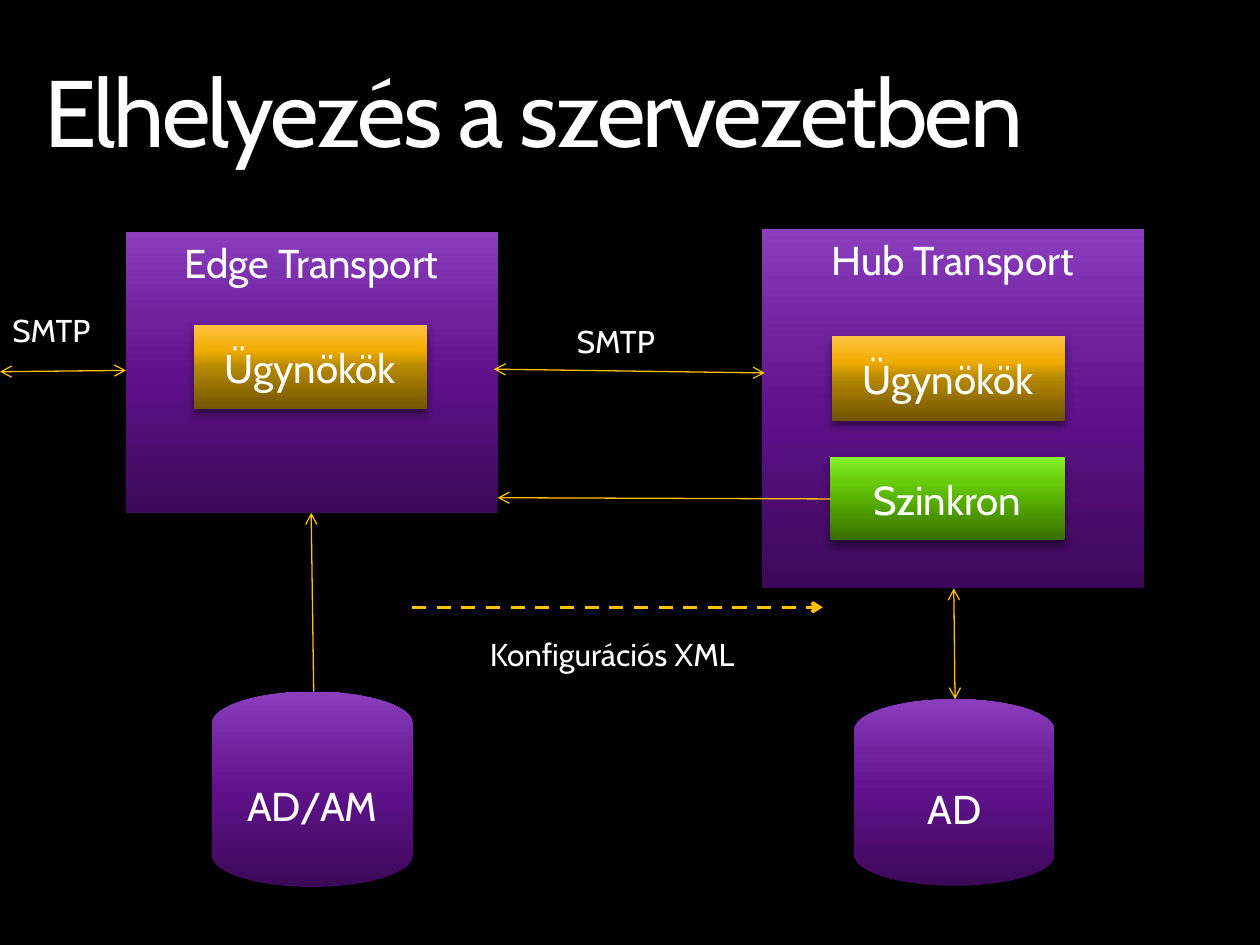
from lxml import etree
from pptx import Presentation
from pptx.dml.color import RGBColor
from pptx.enum import dml, shapes, text
from pptx.oxml import ns
from pptx.util import Inches, Pt

FONT = "Cabin"
WHITE = "FFFFFF"
AMBER = "FFC000"
STOPS = (0, 50, 70, 100)
PURPLE = ("3C0958", "5F128B", "6F229C", "8B3FBD")
GREEN = ("376E00", "58B100", "68CC0B", "83F229")
GOLD = ("705400", "B48800", "F0AC00", "FFC342")
RECT = shapes.MSO_SHAPE.RECTANGLE
DISK = shapes.MSO_SHAPE.FLOWCHART_MAGNETIC_DISK
TOP = text.MSO_ANCHOR.TOP
MIDDLE = text.MSO_ANCHOR.MIDDLE


def rgb(value):
    return RGBColor.from_string(value)


def inches(*lengths):
    return [Inches(length) for length in lengths]


def child(parent, tag, **attributes):
    element = etree.SubElement(parent, ns.qn(tag))
    for key, value in attributes.items():
        element.set(key, str(value))
    return element


def write(frame, words, size, align=text.PP_ALIGN.LEFT):
    paragraph = frame.paragraphs[0]
    paragraph.alignment = align
    run = paragraph.add_run()
    run.text = words
    run.font.name = FONT
    run.font.size = Pt(size)
    run.font.color.rgb = rgb(WHITE)
    return paragraph, run


def paint_gradient(fill, colours):
    fill.gradient()
    fill.gradient_angle = 90
    stops = fill._xPr.find(".//" + ns.qn("a:gsLst"))
    for stop in list(stops):
        stops.remove(stop)
    for position, colour in zip(STOPS, colours):
        stop = child(stops, "a:gs", pos=position * 1000)
        child(stop, "a:srgbClr", val=colour)


def cast_shadow(block):
    block.shadow.inherit = False
    effects = block._element.spPr.find(ns.qn("a:effectLst"))
    shadow = child(effects, "a:outerShdw", blurRad=Pt(5), dist=Pt(3),
                   dir=90 * 60000, rotWithShape=0)
    colour = child(shadow, "a:srgbClr", val="000000")
    child(colour, "a:alpha", val=45000)


def add_block(parent, kind, place, words, colours, anchor=MIDDLE):
    block = parent.shapes.add_shape(kind, *inches(*place))
    paint_gradient(block.fill, colours)
    block.line.fill.background()
    cast_shadow(block)
    block.text_frame.word_wrap = True
    block.text_frame.vertical_anchor = anchor
    write(block.text_frame, words, 23, text.PP_ALIGN.CENTER)


def add_server(slide, place, name, parts):
    server = slide.shapes.add_group_shape()
    add_block(server, RECT, place, name, PURPLE, TOP)
    for part_place, part_name, colours in parts:
        add_block(server, RECT, part_place, part_name, colours)


def add_arrow(slide, start, end, both=False, width=0.75, dash=None):
    arrow = slide.shapes.add_connector(
        shapes.MSO_CONNECTOR.STRAIGHT, *inches(*start, *end))
    arrow.line.color.rgb = rgb(AMBER)
    arrow.line.width = Pt(width)
    if dash:
        arrow.line.dash_style = dash
    outline = arrow.line._get_or_add_ln()
    if both:
        child(outline, "a:headEnd", type="arrow")
    child(outline, "a:tailEnd", type="arrow")
    child(arrow._element.spPr, "a:effectLst")


def add_label(slide, left, top, width, words):
    label = slide.shapes.add_textbox(*inches(left, top, width, 0.4))
    label.text_frame.word_wrap = False
    label.text_frame.auto_size = text.MSO_AUTO_SIZE.SHAPE_TO_FIT_TEXT
    write(label.text_frame, words, 18)


def set_title(slide, words):
    title = slide.shapes.title
    title.left, title.top, title.width, title.height = inches(0.25, 0.3, 9.5, 1.25)
    title.text_frame.vertical_anchor = MIDDLE
    paragraph, run = write(title.text_frame, words, 54)
    paragraph.line_spacing = 0.9
    run.font._element.set("spc", "-150")


def main():
    deck = Presentation()
    deck.slide_width, deck.slide_height = inches(10, 7.5)
    slide = deck.slides.add_slide(deck.slide_layouts[5])
    slide.background.fill.solid()
    slide.background.fill.fore_color.rgb = rgb("000000")

    set_title(slide, "Elhelyezés a szervezetben")
    add_block(slide, DISK, (1.68, 5.49, 1.6, 1.55), "AD/AM", PURPLE)
    add_block(slide, DISK, (6.78, 5.55, 1.59, 1.48), "AD", PURPLE)
    add_server(slide, (6.05, 1.82, 3.03, 2.85), "Hub Transport", [
        ((6.59, 3.63, 1.86, 0.66), "Szinkron", GREEN),
        ((6.6, 2.67, 1.85, 0.67), "Ügynökök", GOLD),
    ])
    add_server(slide, (1, 1.84, 2.95, 2.23), "Edge Transport", [
        ((1.54, 2.58, 1.85, 0.67), "Ügynökök", GOLD),
    ])

    add_arrow(slide, (0, 2.95), (1, 2.94), both=True)
    add_arrow(slide, (7.57, 4.67), (7.58, 5.55), both=True)
    add_arrow(slide, (2.49, 5.49), (2.47, 4.07))
    add_arrow(slide, (6.59, 3.96), (3.95, 3.95))
    add_arrow(slide, (3.92, 2.93), (6.07, 2.96), both=True)
    add_arrow(slide, (3.27, 4.82), (6.53, 4.82), width=2,
              dash=dml.MSO_LINE.DASH)

    add_label(slide, 0, 2.42, 0.9, "SMTP")
    add_label(slide, 4.48, 2.51, 0.9, "SMTP")
    add_label(slide, 3.79, 4.99, 2.32, "Konfigurációs XML")
    deck.save("out.pptx")


if __name__ == "__main__":
    main()
